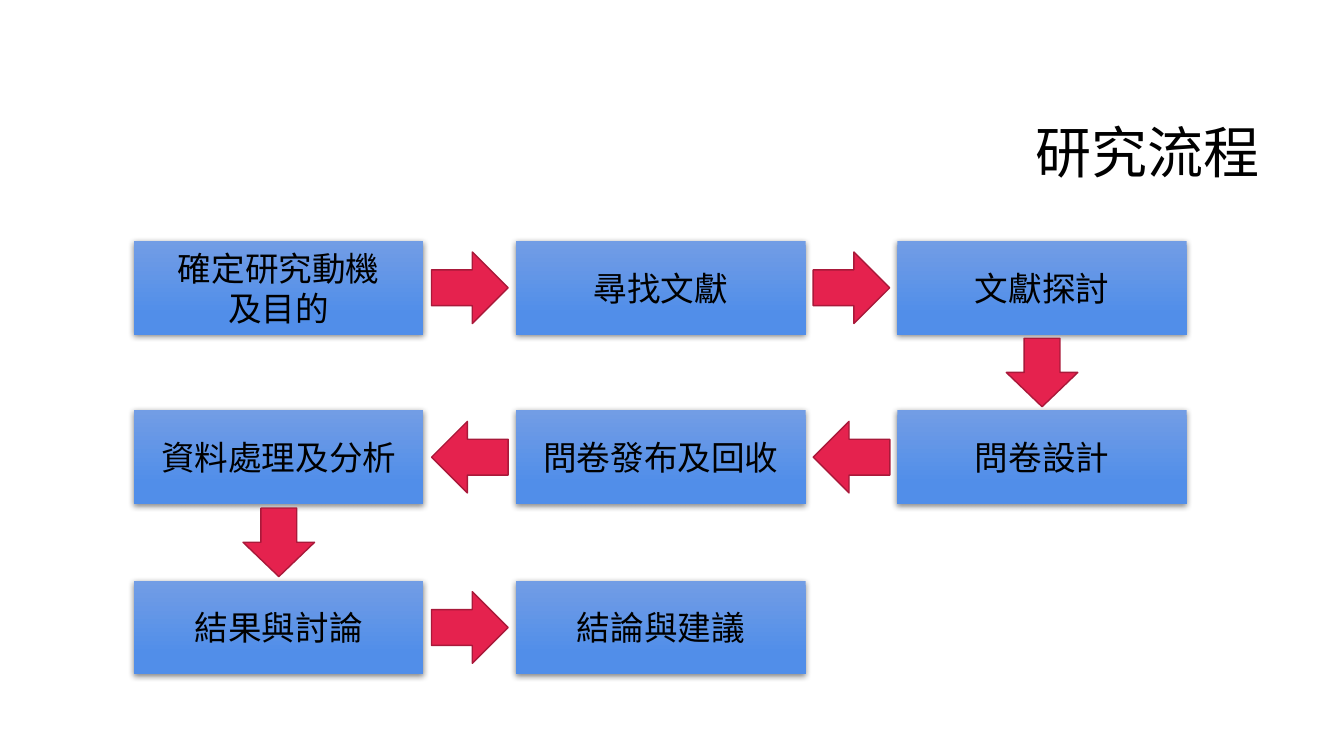
from itertools import pairwise

from lxml import etree
from pptx import Presentation
from pptx.dml.color import RGBColor
from pptx.enum import shapes, text
from pptx.oxml import ns
from pptx.util import Inches, Pt

BLACK = RGBColor(0x00, 0x00, 0x00)
BLUE_TOP = RGBColor(0x72, 0x9D, 0xE5)
BLUE_BOTTOM = RGBColor(0x51, 0x8E, 0xE9)
RED = RGBColor(0xE5, 0x22, 0x4E)
DARK_RED = RGBColor(0xA9, 0x19, 0x3A)
FONT = "Noto Sans CJK SC"

# Box grid
COLUMNS = (1.33, 5.12, 8.9)
ROWS = (2.39, 4.07, 5.76)
BOX_WIDTH, BOX_HEIGHT = 2.87, 0.93
ARROW_HEIGHT = 0.71

# Steps in reading order of the flow: text, column, row
STEPS = (
    ("確定研究動機\n及目的", 0, 0),
    ("尋找文獻", 1, 0),
    ("文獻探討", 2, 0),
    ("問卷設計", 2, 1),
    ("問卷發布及回收", 1, 1),
    ("資料處理及分析", 0, 1),
    ("結果與討論", 0, 2),
    ("結論與建議", 1, 2),
)


class FlowSlide:
    def __init__(self, presentation):
        self.slide = presentation.slides.add_slide(presentation.slide_layouts[5])

    def set_text(self, shape, content, size, **paragraph_format):
        frame = shape.text_frame
        frame.text = content
        frame.word_wrap = True
        frame.vertical_anchor = text.MSO_ANCHOR.MIDDLE
        for paragraph in frame.paragraphs:
            for name, value in paragraph_format.items():
                setattr(paragraph, name, value)
            for run in paragraph.runs:
                for name, value in {"size": Pt(size), "name": FONT}.items():
                    setattr(run.font, name, value)
                run.font.color.rgb = BLACK
                east_asian = etree.SubElement(run.font._element, ns.qn("a:ea"))
                east_asian.set("typeface", FONT)

    def title(self, content):
        shape = self.slide.shapes.title
        place = {"left": 3.17, "top": 0.84, "width": 9.42, "height": 1.41}
        for name, value in place.items():
            setattr(shape, name, Inches(value))
        self.set_text(shape, content, 40, alignment=text.PP_ALIGN.RIGHT, line_spacing=0.9)

    def add_shape(self, kind, left, top, width, height):
        shape = self.slide.shapes.add_shape(
            kind, Inches(left), Inches(top), Inches(width), Inches(height))
        shape.shadow.inherit = False
        return shape

    def add_shadow(self, shape):
        effects = shape._element.spPr.find(ns.qn("a:effectLst"))
        shadow = etree.SubElement(
            effects, ns.qn("a:outerShdw"), blurRad=str(Pt(4.5)), dist=str(Pt(1.5)),
            dir="5400000", algn="ctr", rotWithShape="0")
        color = etree.SubElement(shadow, ns.qn("a:srgbClr"), val=str(BLACK))
        etree.SubElement(color, ns.qn("a:alpha"), val="48000")

    def box(self, content, column, row):
        shape = self.add_shape(shapes.MSO_SHAPE.RECTANGLE, COLUMNS[column], ROWS[row],
                               BOX_WIDTH, BOX_HEIGHT)
        shape.fill.gradient()
        shape.fill.gradient_angle = 270
        stops = ((0, BLUE_TOP), (0.78, BLUE_BOTTOM))
        for stop, (position, color) in zip(shape.fill.gradient_stops, stops):
            stop.position = position
            stop.color.rgb = color
        shape.line.fill.background()
        self.add_shadow(shape)
        self.set_text(shape, content, 24, alignment=text.PP_ALIGN.CENTER)

    def arrow(self, start, end):
        """Centre an arrow in the gap between two neighbouring boxes."""
        (_, column, row), (_, next_column, next_row) = start, end
        center_x = (COLUMNS[column] + COLUMNS[next_column] + BOX_WIDTH) / 2
        center_y = (ROWS[row] + ROWS[next_row] + BOX_HEIGHT) / 2
        if row != next_row:
            width, rotation = 0.68, 90
        else:
            width, rotation = 0.76, 0 if next_column > column else 180
        shape = self.add_shape(
            shapes.MSO_SHAPE.RIGHT_ARROW, center_x - width / 2,
            center_y - ARROW_HEIGHT / 2, width, ARROW_HEIGHT)
        shape.rotation = rotation
        shape.fill.solid()
        shape.fill.fore_color.rgb = RED
        shape.line.color.rgb = DARK_RED
        shape.line.width = Pt(1)


def main():
    presentation = Presentation()
    presentation.slide_width = Inches(13.33)
    presentation.slide_height = Inches(7.5)
    flow = FlowSlide(presentation)

    # Title
    flow.title("研究流程")

    # Steps
    for step in STEPS:
        flow.box(*step)

    # Arrows from each step to the next
    for start, end in pairwise(STEPS):
        flow.arrow(start, end)

    presentation.save("out.pptx")


if __name__ == "__main__":
    main()
